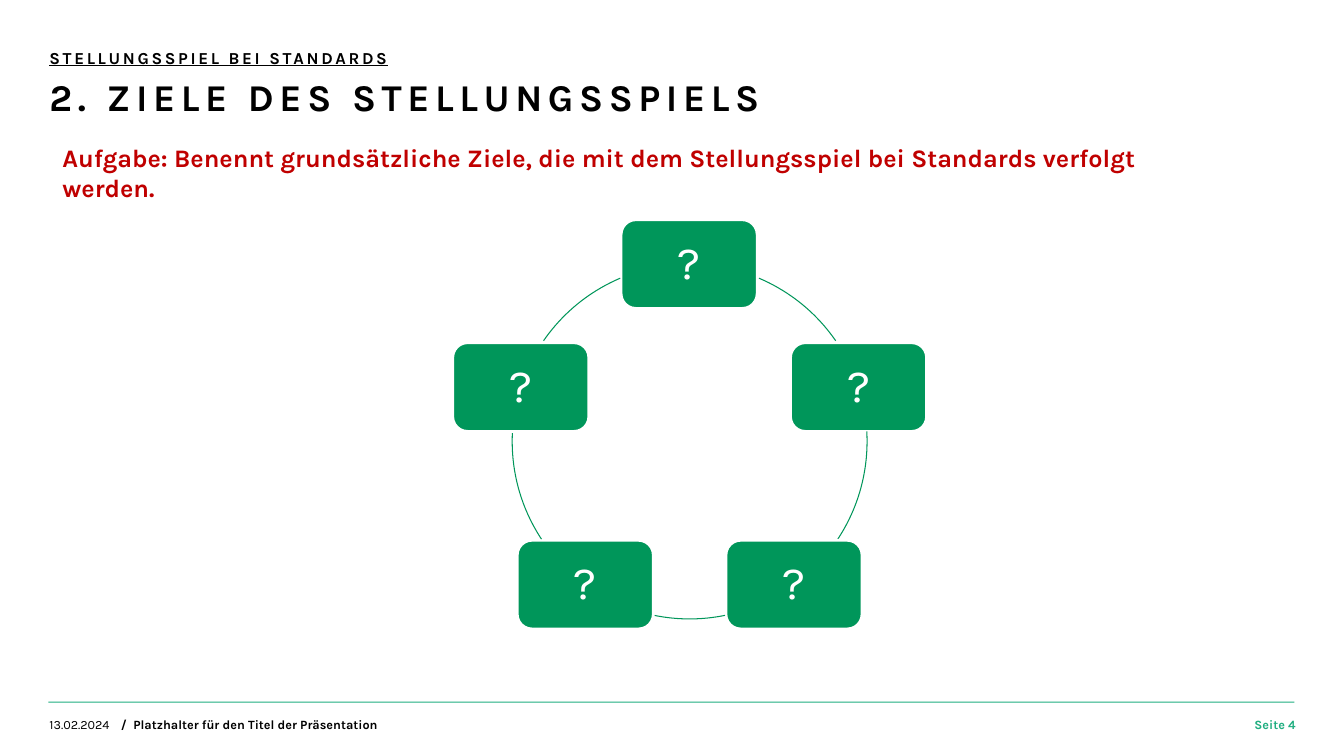
from math import cos, radians, sin
from pptx import Presentation
from pptx.dml.color import RGBColor
from pptx.enum.shapes import MSO_SHAPE
from pptx.enum.text import MSO_ANCHOR, MSO_AUTO_SIZE, PP_ALIGN
from pptx.util import Emu, Pt

PX = 9144
BLACK = RGBColor(0x00, 0x00, 0x00)
WHITE = RGBColor(0xFF, 0xFF, 0xFF)
RED = RGBColor(0xC0, 0x00, 0x00)
GREEN = RGBColor(0x00, 0x96, 0x5A)
MINT = RGBColor(0x20, 0xAE, 0x80)


def place(*lengths):
    return [Emu(length * PX) for length in lengths]


def write(shape, text, size, color=BLACK, bold=True, underline=None, tracking=0,
          align=PP_ALIGN.LEFT, anchor=MSO_ANCHOR.TOP, insets=(0, 0), leading=None):
    frame = shape.text_frame
    frame.word_wrap = True
    frame.auto_size = MSO_AUTO_SIZE.NONE
    frame.vertical_anchor = anchor
    frame.margin_left = frame.margin_right = Emu(insets[0] * PX)
    frame.margin_top = frame.margin_bottom = Emu(insets[1] * PX)
    para = frame.paragraphs[0]
    para.alignment = align
    para.line_spacing = leading
    span = para.add_run()
    span.text = text
    span.font.name = "Karla"
    span.font.size = Pt(size)
    span.font.bold = bold
    span.font.underline = underline
    span.font.color.rgb = color
    if tracking:
        span.font._element.set("spc", str(tracking))


deck = Presentation()
deck.slide_width, deck.slide_height = place(1333, 750)
page = deck.slides.add_slide(deck.slide_layouts[5])

rule = page.shapes.add_shape(MSO_SHAPE.RECTANGLE, *place(48, 696, 1236, 1))
rule.shadow.inherit = False
rule.fill.solid()
rule.fill.fore_color.rgb = MINT
rule.line.fill.background()

title = page.shapes.title
title.left, title.top, title.width, title.height = place(49, 78, 1106, 41)
write(title, "2. ZIELE DES STELLUNGSSPIELS", 27, tracking=400, leading=Pt(29))

middle = MSO_ANCHOR.MIDDLE
labels = [
    ((49, 47, 1106, 20), "STELLUNGSSPIEL BEI STANDARDS", 12,
     dict(underline=True, tracking=190)),
    ((52, 136, 1148, 70),
     "Aufgabe: Benennt grundsätzliche Ziele, die mit dem Stellungsspiel bei Standards verfolgt werden.",
     18, dict(color=RED, insets=(10, 5))),
    ((49, 711, 71, 15), "13.02.2024", 9, dict(bold=False, anchor=middle)),
    ((120, 711, 1082, 15), "/\u00a0 Platzhalter für den Titel der Präsentation".replace("\u00a0", " "), 9,
     dict(anchor=middle)),
    ((1216, 711, 69, 15), "Seite 4", 9,
     dict(color=MINT, align=PP_ALIGN.RIGHT, anchor=middle)),
]
for bounds, text, size, style in labels:
    write(page.shapes.add_textbox(*place(*bounds)), text, size, **style)

center_x, center_y, radius = 684, 438, 176
card_width, card_height = 135, 88
arcs = [(293, 325.4), (356.7, 33.4), (78.5, 101.5), (146.6, 183.3), (214.6, 247)]
for index, angles in enumerate(arcs):
    turn = radians(index * 360 / len(arcs) - 90)
    left = round(center_x + radius * cos(turn) - card_width / 2)
    top = round(center_y + radius * sin(turn) - card_height / 2)
    card = page.shapes.add_shape(
        MSO_SHAPE.ROUNDED_RECTANGLE, *place(left, top, card_width, card_height))
    card.shadow.inherit = False
    card.fill.solid()
    card.fill.fore_color.rgb = GREEN
    card.line.color.rgb = WHITE
    card.line.width = Pt(2)
    write(card, "?", 33, color=WHITE, bold=False, align=PP_ALIGN.CENTER,
          anchor=middle, insets=(14, 14), leading=0.9)

    arc = page.shapes.add_shape(
        MSO_SHAPE.ARC,
        *place(center_x - radius, center_y - radius, 2 * radius, 2 * radius))
    arc.shadow.inherit = False
    arc.fill.background()
    arc.line.color.rgb = GREEN
    arc.line.width = Pt(0.75)
    for position, angle in enumerate(angles):
        arc.adjustments[position] = angle * 0.6

deck.save("out.pptx")
